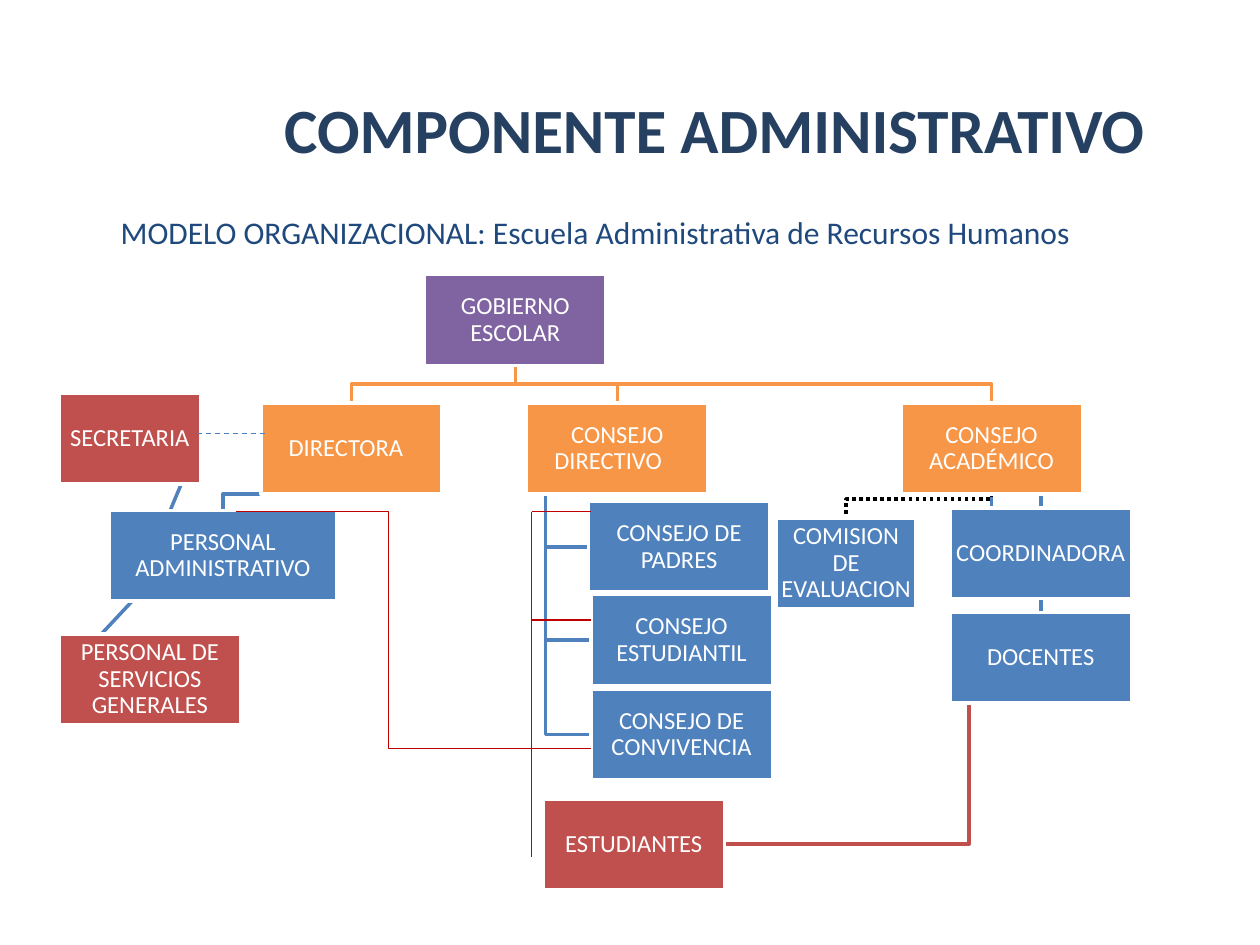
from dataclasses import dataclass

from lxml.etree import SubElement
from pptx import Presentation
from pptx.dml.color import RGBColor
from pptx.enum.dml import MSO_LINE as Dash
from pptx.enum.shapes import MSO_CONNECTOR as Connector, MSO_SHAPE as Shape
from pptx.enum.text import MSO_ANCHOR as Anchor, PP_ALIGN as Align
from pptx.oxml.ns import qn
from pptx.util import Inches, Pt

COLORS = {
    "navy": "254061", "subtitle": "1F497D", "white": "FFFFFF", "black": "000000",
    "purple": "8064A2", "orange": "F79646", "blue": "4F81BD", "red": "C0504D",
    "dashed": "4B7EBC", "crimson": "C00000",
}
WIDTH, HEIGHT = Inches(10), Inches(7.5)
COLUMNS, ROWS = 100, 75
FONT = "Calibri"
BOX_WIDTH, BOX_HEIGHT = 14.4, 7.2
STEM = 1.5


@dataclass
class Unit:
    label: str
    left: float
    top: float
    color: str
    width: float = BOX_WIDTH

    @property
    def center(self):
        return self.left + self.width / 2

    @property
    def middle(self):
        return self.top + BOX_HEIGHT / 2

    @property
    def right(self):
        return self.left + self.width

    @property
    def bottom(self):
        return self.top + BOX_HEIGHT


UNITS = {
    "government": Unit("GOBIERNO ESCOLAR", 33.7, 21.8, "purple"),
    "director": Unit("DIRECTORA\t", 20.7, 32, "orange"),
    "staff": Unit("PERSONAL ADMINISTRATIVO", 8.7, 40.5, "blue", 18),
    "secretary": Unit("SECRETARIA", 4.7, 31.2, "red", 11.2),
    "services": Unit("PERSONAL DE SERVICIOS GENERALES", 4.7, 50.3, "red"),
    "board": Unit("CONSEJO DIRECTIVO\t", 41.8, 32, "orange"),
    "parents": Unit("CONSEJO DE PADRES", 46.7, 39.8, "blue"),
    "pupils": Unit("CONSEJO ESTUDIANTIL", 46.9, 47.2, "blue"),
    "coexistence": Unit("CONSEJO DE CONVIVENCIA", 46.9, 54.7, "blue"),
    "academic": Unit("CONSEJO ACADÉMICO", 71.5, 32, "orange"),
    "evaluation": Unit("COMISION DE EVALUACION", 61.6, 41.1, "blue", 11.1),
    "coordinator": Unit("COORDINADORA", 75.4, 40.3, "blue"),
    "teachers": Unit("DOCENTES", 75.4, 48.6, "blue"),
    "students": Unit("ESTUDIANTES", 43.1, 63.4, "red"),
}


def col(count):
    return round(WIDTH * count / COLUMNS)


def row(count):
    return round(HEIGHT * count / ROWS)


def rgb(name):
    return RGBColor.from_string(COLORS[name])


def style_line(shape, color, points, dash=None):
    shape.line.color.rgb = rgb(color)
    shape.line.width = Pt(points)
    if dash:
        shape.line.dash_style = dash


def style_text(para, size, color, align, bold=False):
    para.alignment = align
    para.font.name = FONT
    para.font.size = Pt(size)
    para.font.bold = bold
    para.font.color.rgb = rgb(color)


def add_title(page, text):
    title = page.shapes.title
    title.left, title.top, title.width, title.height = col(11.7), row(3.9), col(90), row(12.5)
    title.text_frame.text = text
    title.text_frame.vertical_anchor = Anchor.MIDDLE
    style_text(title.text_frame.paragraphs[0], 36, "navy", Align.CENTER, True)


def add_subtitle(page, text):
    box = page.shapes.add_textbox(col(8.6), row(16.4), col(84.4), row(4))
    box.text_frame.word_wrap = True
    box.text_frame.text = text
    style_text(box.text_frame.paragraphs[0], 18, "subtitle", Align.LEFT)


def add_unit(page, unit):
    box = page.shapes.add_shape(
        Shape.RECTANGLE, col(unit.left), row(unit.top), col(unit.width), row(BOX_HEIGHT))
    box.shadow.inherit = False
    box.fill.solid()
    box.fill.fore_color.rgb = rgb(unit.color)
    style_line(box, "white", 2)
    frame = box.text_frame
    frame.word_wrap = True
    frame.vertical_anchor = Anchor.MIDDLE
    frame.margin_left = frame.margin_right = Inches(0.01)
    frame.margin_top = frame.margin_bottom = Inches(0.01)
    frame.text = unit.label
    para = frame.paragraphs[0]
    para.line_spacing = 0.9
    style_text(para, 14, "white", Align.CENTER)


def add_route(page, points, color, dash=None):
    start, *rest = [(col(x), row(y)) for x, y in points]
    builder = page.shapes.build_freeform(*start)
    builder.add_line_segments(rest, close=False)
    route = builder.convert_to_shape()
    route.shadow.inherit = False
    route.fill.background()
    style_line(route, color, 2, dash)


def add_link(page, start, end, color, points=0.75, kind=Connector.STRAIGHT, dash=None):
    link = page.shapes.add_connector(
        kind, col(start[0]), row(start[1]), col(end[0]), row(end[1]))
    style_line(link, color, points, dash)
    SubElement(link._element.spPr, qn("a:effectLst"))


def add_branch(page, parent, child, bend, color, dash=None):
    points = [(parent.center, parent.bottom), (parent.center, bend),
              (child.center, bend), (child.center, child.top)]
    add_route(page, points, color, dash)


def add_hierarchy(page):
    unit = UNITS
    teachers, students, board, staff = (
        unit[key] for key in ("teachers", "students", "board", "staff"))
    stem = teachers.left + STEM
    add_route(page, [(stem, teachers.bottom), (stem, students.middle),
                     (students.right, students.middle)], "red")
    for parent, child, bend, color, dash in (
        ("academic", "teachers", 47.1, "blue", None),
        ("academic", "coordinator", 39.2, "blue", None),
        ("academic", "evaluation", 39.6, "black", Dash.ROUND_DOT),
        ("government", "academic", 30.5, "orange", None),
        ("government", "board", 30.5, "orange", None),
        ("government", "director", 30.5, "orange", None),
        ("director", "staff", 39.2, "blue", None),
    ):
        add_branch(page, unit[parent], unit[child], bend, color, dash)
    stem = board.left + STEM
    for key in ("coexistence", "pupils", "parents"):
        child = unit[key]
        add_route(page, [(stem, board.bottom), (stem, child.middle),
                         (child.left, child.middle)], "blue")
    corner = (staff.left + 1.8, staff.bottom)
    services, secretary = unit["services"], unit["secretary"]
    add_link(page, corner, (services.left, services.middle), "blue", 2)
    add_link(page, corner, (secretary.right, secretary.middle), "blue", 2)


def add_relations(page):
    spine, top, base = 42.2, 40.6, 59.4
    add_link(page, (15.6, 34.4), (21.1, 34.4), "dashed", dash=Dash.DASH)
    add_link(page, (18.7, top), (43, base), "crimson", kind=Connector.ELBOW)
    add_link(page, (spine, top), (spine, 68), "crimson")
    for level in (top, 49.2, base):
        add_link(page, (spine, level), (46.9, level), "crimson")


def main():
    deck = Presentation()
    deck.slide_width, deck.slide_height = WIDTH, HEIGHT
    page = deck.slides.add_slide(deck.slide_layouts[5])
    add_title(page, "COMPONENTE ADMINISTRATIVO")
    add_hierarchy(page)
    for unit in UNITS.values():
        add_unit(page, unit)
    add_relations(page)
    add_subtitle(page, "MODELO ORGANIZACIONAL: Escuela Administrativa de Recursos Humanos")
    deck.save("out.pptx")


if __name__ == "__main__":
    main()
